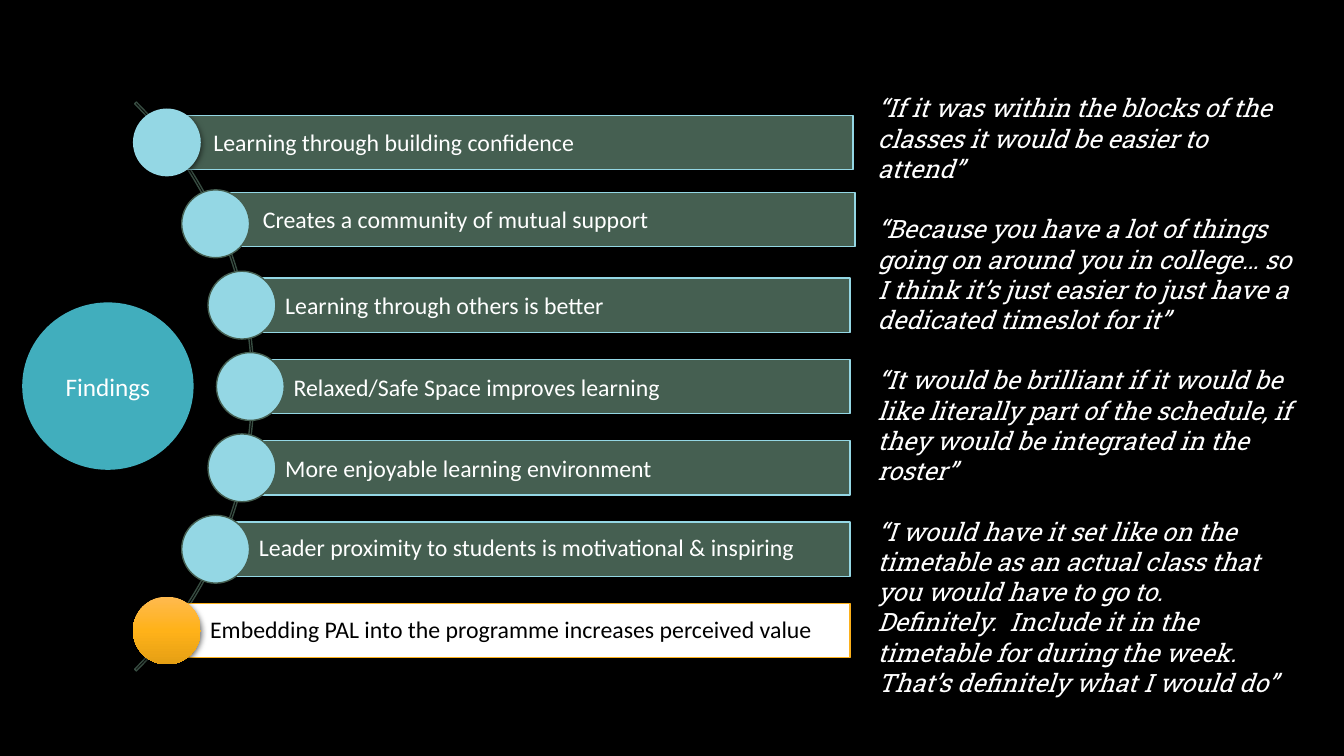
import copy
import math
from dataclasses import dataclass

from lxml import etree
from pptx import Presentation
from pptx import util as u
from pptx.dml.color import RGBColor
from pptx.enum import shapes, text
from pptx.oxml.ns import qn


@dataclass(frozen=True)
class Theme:
    black: RGBColor = RGBColor.from_string("000000")
    white: RGBColor = RGBColor.from_string("FFFFFF")
    green: RGBColor = RGBColor.from_string("455F51")
    arc: RGBColor = RGBColor.from_string("374C41")
    sky: RGBColor = RGBColor.from_string("94D7E4")
    teal: RGBColor = RGBColor.from_string("41AEBD")
    gold: RGBColor = RGBColor.from_string("FCB11C")
    gold_stops: tuple = ("FFBA4F", "FFB219", "E59F14")
    label_font: str = "Calibri"
    quote_font: str = "Roboto Slab"
    finding_size: u.Pt = u.Pt(17)
    body_size: u.Pt = u.Pt(18)
    quote_gap: u.Pt = u.Pt(21.6)
    outline: u.Pt = u.Pt(1)


theme = Theme()
prs = Presentation()
prs.slide_width = u.Cm(33.87)
prs.slide_height = u.Cm(19.05)
slide = prs.slides.add_slide(prs.slide_layouts[6])
slide.background.fill.solid()
slide.background.fill.fore_color.rgb = theme.black


def add_figure(kind, left, top, width, height, fill=None, line=None):
    figure = slide.shapes.add_shape(kind, u.Cm(left), u.Cm(top), u.Cm(width), u.Cm(height))
    figure.shadow.inherit = False
    if fill is None:
        figure.fill.background()
    else:
        figure.fill.solid()
        figure.fill.fore_color.rgb = fill
    if line is None:
        figure.line.fill.background()
    else:
        figure.line.color.rgb = line
        figure.line.width = theme.outline
    return figure


def cast_shadow(figure, opacity, blur, distance, angle):
    effects = figure._element.spPr.find(qn("a:effectLst"))
    shadow = etree.SubElement(effects, qn("a:outerShdw"), blurRad=str(u.Pt(blur)),
                              dist=str(u.Pt(distance)), dir=str(angle * 60000), rotWithShape="0")
    color = etree.SubElement(shadow, qn("a:srgbClr"), val=str(theme.black))
    etree.SubElement(color, qn("a:alpha"), val=str(opacity * 1000))


center_x, center_y = -3.73, 9.74
arc_size = 20.27
orbit = 10.04
pitch = 2.05
dot_size = 1.71
bar_height = 1.37
bar_right = 21.42

arc = add_figure(shapes.MSO_SHAPE.BLOCK_ARC, center_x - arc_size / 2, center_y - arc_size / 2,
                 arc_size, arc_size, line=theme.arc)
for index, value in enumerate((189, 27, 0.003)):
    arc.adjustments[index] = value

findings = [
    ("Learning through building confidence", 0.08, 0, 0.08, 1),
    ("Creates a community of mutual support", 0.1, -0.11, 0.13, 1),
    ("Learning through others is better", 0, 0, 0, 1),
    ("Relaxed/Safe Space improves learning", 0, 0, 0, 1),
    ("More enjoyable learning environment", 0, 0, 0, 1),
    ("Leader proximity to students is motivational & inspiring", 0, 0, 0, 0.9),
    ("Embedding PAL into the programme increases perceived value", 0, 0, 0, 0.9),
]
last = len(findings) - 1

for row, (wording, shift_x, shift_y, shift_right, spacing) in enumerate(findings):
    offset = (row - last / 2) * pitch
    dot_x = center_x + math.sqrt(orbit ** 2 - offset ** 2)
    dot_y = center_y + offset
    highlighted = row == last
    at_end = row in (0, last)

    bar_left = dot_x + shift_x
    bar = add_figure(shapes.MSO_SHAPE.RECTANGLE, bar_left, dot_y - bar_height / 2 + shift_y,
                     bar_right + shift_right - bar_left, bar_height,
                     theme.white if highlighted else theme.green,
                     theme.gold if highlighted else theme.sky)
    frame = bar.text_frame
    frame.word_wrap = True
    frame.vertical_anchor = text.MSO_ANCHOR.MIDDLE
    frame.margin_left = u.Cm(1.09)
    frame.margin_right = frame.margin_top = frame.margin_bottom = u.Cm(0.13)
    finding = frame.paragraphs[0]
    finding.alignment = text.PP_ALIGN.LEFT
    finding.line_spacing = spacing
    run = finding.add_run()
    run.text = wording
    run.font.name = theme.label_font
    run.font.size = theme.finding_size
    run.font.color.rgb = theme.black if highlighted else theme.white

    dot = add_figure(shapes.MSO_SHAPE.OVAL, dot_x - dot_size / 2, dot_y - dot_size / 2,
                     dot_size, dot_size, theme.sky, None if at_end else theme.green)
    if at_end:
        cast_shadow(dot, 63, 4.5, 1.5, 90)
    if highlighted:
        dot.fill.gradient()
        dot.fill.gradient_angle = 270
        first_stop = dot._element.spPr.find(".//" + qn("a:gs"))
        first_stop.addnext(copy.deepcopy(first_stop))
        for index, stop in enumerate(dot.fill.gradient_stops):
            stop.position = index / 2
            stop.color.rgb = RGBColor.from_string(theme.gold_stops[index])

hub = add_figure(shapes.MSO_SHAPE.OVAL, 0.56, 7.62, 4.32, 4.22, theme.teal)
cast_shadow(hub, 28, 11.8, 19.7, 141)
hub.text_frame.vertical_anchor = text.MSO_ANCHOR.MIDDLE
hub_label = hub.text_frame.paragraphs[0]
hub_label.alignment = text.PP_ALIGN.CENTER
run = hub_label.add_run()
run.text = "Findings"
run.font.name = theme.label_font
run.font.size = theme.body_size
run.font.color.rgb = theme.white

quotes = [
    "“If it was within the blocks of the classes it would be easier to attend”",
    "“Because you have a lot of things going on around you in college… so I think it’s just "
    "easier to just have a dedicated timeslot for it”",
    "“It would be brilliant if it would be like literally part of the schedule, if they would "
    "be integrated in the roster”",
    "“I would have it set like on the timetable as an actual class that you would have to go "
    "to.  Definitely.  Include it in the timetable for during the week.  That’s definitely what "
    "I would do”",
]
quote_frame = slide.shapes.add_textbox(u.Cm(21.87), u.Cm(2.21), u.Cm(10.97), u.Cm(15.65)).text_frame
quote_frame.word_wrap = True
quote_frame.auto_size = text.MSO_AUTO_SIZE.SHAPE_TO_FIT_TEXT
for index, wording in enumerate(quotes):
    if index == 0:
        quote = quote_frame.paragraphs[0]
    else:
        quote = quote_frame.add_paragraph()
        quote.space_before = theme.quote_gap
    run = quote.add_run()
    run.text = wording
    run.font.name = theme.quote_font
    run.font.size = theme.body_size
    run.font.italic = True
    run.font.color.rgb = theme.white

prs.save("out.pptx")
